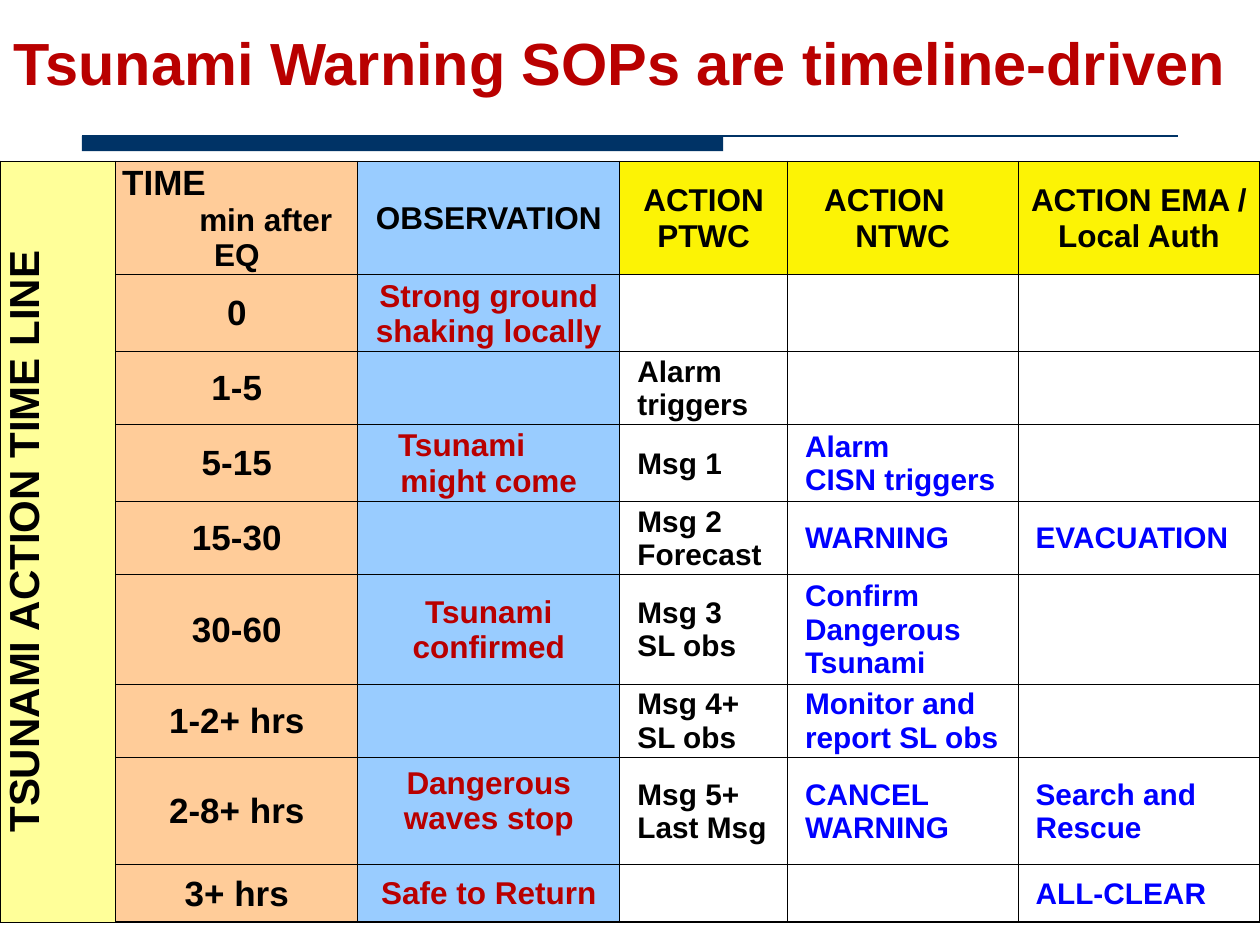
from dataclasses import dataclass
from typing import Optional

from lxml.etree import SubElement
from pptx import Presentation
from pptx.dml.color import RGBColor
from pptx.enum.shapes import MSO_CONNECTOR, MSO_SHAPE
from pptx.enum.text import MSO_ANCHOR, MSO_AUTO_SIZE, PP_ALIGN
from pptx.oxml import parse_xml
from pptx.oxml.ns import nsdecls, qn
from pptx.util import Inches, Pt


@dataclass(frozen=True)
class Theme:
    font: str = "Arial"
    black: str = "000000"
    red: str = "B90000"
    blue: str = "0000FF"
    navy: str = "003366"
    yellow: str = "FCF305"
    cream: str = "FFFF99"
    peach: str = "FFCC99"
    sky: str = "99CCFF"
    title: int = 34
    banner: int = 24
    time: int = 20
    head: int = 18
    action: int = 17
    spacer: int = 8
    grid: float = 0.5
    frame: float = 1


@dataclass(frozen=True)
class Style:
    size: int
    color: str
    fill: Optional[str] = None
    align: PP_ALIGN = PP_ALIGN.CENTER
    indent: float = 0


T = Theme()
BANNER = Style(T.banner, T.black, T.cream)
TIME = Style(T.time, T.black, T.peach)
OBSERVED = Style(T.head, T.red, T.sky)
OBSERVED_HEAD = Style(T.head, T.black, T.sky)
ACTION_HEAD = Style(T.head, T.black, T.yellow)
ACTION = Style(T.action, T.black, align=PP_ALIGN.LEFT, indent=0.13)
ALERT = Style(T.action, T.blue, align=PP_ALIGN.LEFT, indent=0.13)

COLUMNS = [0.92, 1.92, 2.08, 1.33, 1.83, 1.92]
ROWS = [0.28, 0.9, 0.61, 0.58, 0.61, 0.58, 0.87, 0.58, 0.85, 0.46]
HEADS = ["TIME\nmin after\nEQ", "OBSERVATION", "ACTION PTWC", "ACTION\nNTWC",
         "ACTION EMA / Local Auth"]
HEAD_STYLES = [TIME, OBSERVED_HEAD, ACTION_HEAD, ACTION_HEAD, ACTION_HEAD]
STEPS = [
    ["0", "Strong ground shaking locally", "", "", ""],
    ["1-5", "", "Alarm triggers", "", ""],
    ["5-15", "Tsunami\nmight come", "Msg 1", "Alarm\nCISN triggers", ""],
    ["15-30", "", "Msg 2 Forecast", "WARNING", "EVACUATION"],
    ["30-60", "Tsunami confirmed", "Msg 3\nSL obs", "Confirm Dangerous Tsunami", ""],
    ["1-2+ hrs", "", "Msg 4+\nSL obs", "Monitor and report SL obs", ""],
    ["2-8+ hrs", "Dangerous\nwaves stop", "Msg 5+ Last Msg", "CANCEL WARNING",
     "Search and Rescue"],
    ["3+ hrs", "Safe to Return", "", "", "ALL-CLEAR"],
]
STEP_STYLES = [TIME, OBSERVED, ACTION, ALERT, ALERT]


def rgb(color: str) -> RGBColor:
    return RGBColor.from_string(color)


def format_run(r, size: int, color: str) -> None:
    r.font.name, r.font.size, r.font.bold = T.font, Pt(size), True
    r.font.color.rgb = rgb(color)


def indent(p, left: float = 0, right: float = 0) -> None:
    pPr = p._p.get_or_add_pPr()
    pPr.set("marL", str(Inches(left)))
    pPr.set("marR", str(Inches(right)))


def fill_cell(cell, text: str, style: Style) -> None:
    if style.fill:
        cell.fill.solid()
        cell.fill.fore_color.rgb = rgb(style.fill)
    if not text:
        return
    cell.text_frame.text = text
    for p in cell.text_frame.paragraphs:
        p.alignment = style.align
        indent(p, style.indent)
        for r in p.runs:
            format_run(r, style.size, style.color)


def border_cell(cell, row: int, col: int) -> None:
    """Rule the grid, heavier round the outside; the spacer row has only a bottom line."""
    last_row, last_col = len(ROWS) - 1, len(COLUMNS) - 1
    outer = {"lnL": col == 0, "lnR": col == last_col,
             "lnT": row == 1, "lnB": row in (0, last_row)}
    tcPr = cell._tc.get_or_add_tcPr()
    for i, (side, is_outer) in enumerate(outer.items()):
        width = Pt(T.frame if is_outer else T.grid)
        paint = (f'<a:solidFill><a:srgbClr val="{T.black}"/></a:solidFill>'
                 if row or side == "lnB" else "<a:noFill/>")
        tcPr.insert(i, parse_xml(
            f'<a:{side} {nsdecls("a")} w="{width}">{paint}</a:{side}>'))


def add_title(slide) -> None:
    sp = slide.shapes.title
    sp.left, sp.top, sp.width, sp.height = map(Inches, (0.01, 0.17, 10, 0.65))
    tf = sp.text_frame
    tf.text = "Tsunami Warning SOPs are timeline-driven"
    tf.auto_size, tf.word_wrap = MSO_AUTO_SIZE.NONE, True
    tf.vertical_anchor = MSO_ANCHOR.BOTTOM
    p = tf.paragraphs[0]
    p.alignment, p.line_spacing = PP_ALIGN.LEFT, 1.1
    format_run(p.runs[0], T.title, T.red)


def add_rule(slide) -> None:
    """Draw the thick bar and the thin line that runs on from it."""
    left, top = Inches(0.65), Inches(1.08)
    bar = slide.shapes.add_shape(MSO_SHAPE.RECTANGLE, left, top, Inches(5.09), Inches(0.12))
    bar.shadow.inherit = False
    bar.fill.solid()
    bar.fill.fore_color.rgb = rgb(T.navy)
    bar.line.fill.background()
    line = slide.shapes.add_connector(MSO_CONNECTOR.STRAIGHT, left, top, Inches(9.35), top)
    line.line.color.rgb, line.line.width = rgb(T.navy), Pt(0.75)
    SubElement(line._element.spPr, qn("a:effectLst"))


def add_timeline(slide) -> None:
    table = slide.shapes.add_table(len(ROWS), len(COLUMNS), 0, Inches(1),
                                   Inches(10), Inches(sum(ROWS))).table
    table.first_row = table.horz_banding = False
    for column, width in zip(table.columns, COLUMNS):
        column.width = Inches(width)
    for i, height in enumerate(ROWS):
        table.rows[i].height = Inches(height)
        for j in range(len(COLUMNS)):
            cell = table.cell(i, j)
            cell.margin_left = cell.margin_right = cell.margin_top = Inches(0.01)
            cell.margin_bottom = 0
            cell.vertical_anchor = MSO_ANCHOR.MIDDLE
            cell.fill.background()
            border_cell(cell, i, j)
            if i == 0:
                end = SubElement(cell.text_frame.paragraphs[0]._p, qn("a:endParaRPr"))
                end.set("sz", str(T.spacer * 100))

    table.cell(0, 0).merge(table.cell(0, 3))
    banner = table.cell(1, 0)
    banner.merge(table.cell(len(ROWS) - 1, 0))
    fill_cell(banner, "TSUNAMI ACTION TIME LINE", BANNER)
    banner._tc.get_or_add_tcPr().set("vert", "vert270")

    for i, texts in enumerate([HEADS, *STEPS], start=1):
        styles = HEAD_STYLES if i == 1 else STEP_STYLES
        for j, (text, style) in enumerate(zip(texts, styles), start=1):
            fill_cell(table.cell(i, j), text, style)

    time, minutes, eq = table.cell(1, 1).text_frame.paragraphs
    time.alignment = PP_ALIGN.LEFT
    indent(time, left=0.04)
    indent(minutes, left=0.46)
    for p in (minutes, eq):
        p.runs[0].font.size = Pt(T.head)
    indent(table.cell(1, 4).text_frame.paragraphs[0], right=0.29)
    indent(table.cell(4, 2).text_frame.paragraphs[0], right=0.43)
    waves_stop = table.cell(8, 2)
    waves_stop.vertical_anchor = MSO_ANCHOR.BOTTOM
    waves_stop.margin_bottom = Inches(0.22)


def main() -> None:
    prs = Presentation()
    prs.slide_width, prs.slide_height = Inches(10), Inches(7.5)
    slide = prs.slides.add_slide(prs.slide_layouts[5])
    add_rule(slide)
    add_title(slide)
    add_timeline(slide)
    prs.save("out.pptx")


if __name__ == "__main__":
    main()
